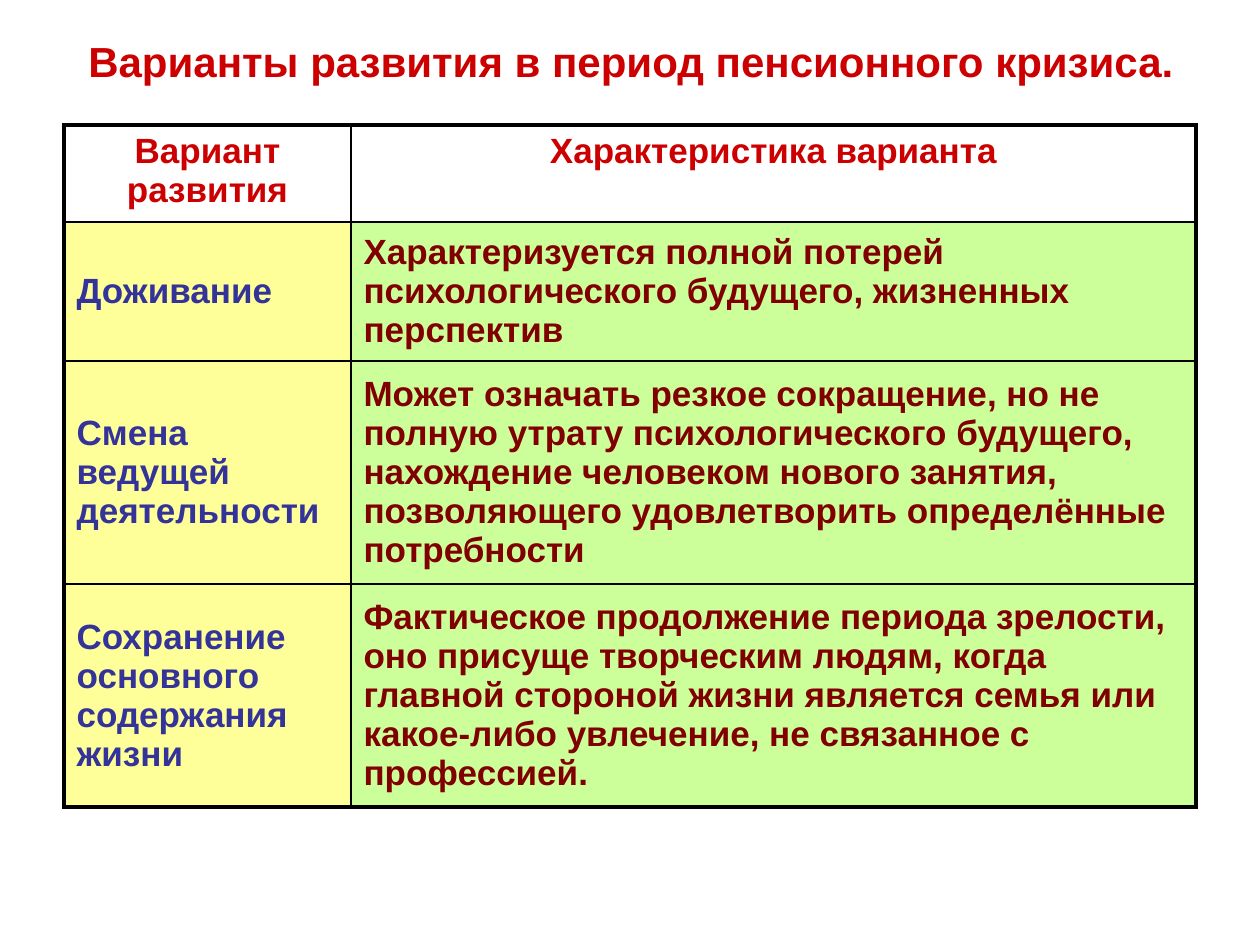
from pptx import Presentation
from pptx.dml.color import RGBColor
from pptx.enum.text import MSO_ANCHOR as Anchor, MSO_AUTO_SIZE as AutoSize, PP_ALIGN as Align
from pptx.oxml import parse_xml
from pptx.oxml.ns import nsdecls
from pptx.util import Emu, Pt

# Content
TITLE = "Варианты развития в период пенсионного кризиса."
ROWS = [
    ("Вариант развития", "Характеристика варианта"),
    ("Доживание",
     "Характеризуется полной потерей психологического будущего, жизненных перспектив"),
    ("Смена ведущей деятельности",
     "Может означать резкое сокращение, но не полную утрату психологического будущего, "
     "нахождение человеком нового занятия, позволяющего удовлетворить определённые потребности"),
    ("Сохранение основного содержания жизни",
     "Фактическое продолжение периода зрелости, оно присуще творческим людям, когда главной "
     "стороной жизни является семья или какое-либо увлечение, не связанное с профессией."),
]
COLUMN_WIDTHS = [287, 845]
ROW_HEIGHTS = [97, 139, 223, 223]
RED = "CC0000"
HEADER_STYLE = (RED, "FFFFFF")
COLUMN_STYLES = [("333399", "FFFF99"), ("800000", "CCFF99")]  # text, fill
THIN, THICK = Pt(1), Pt(2.25)


def px(count):
    return Emu(round(count * 914400 / 126))


def color(value):
    return RGBColor.from_string(value)


def format_text(frame, size, text_color, align):
    for para in frame.paragraphs:
        para.alignment = align
        for span in para.runs:
            font = span.font
            font.name, font.size, font.bold = "Arial", Pt(size), True
            font.color.rgb = color(text_color)


def set_borders(cell, widths):
    """Draw black borders; widths maps L, R, T, B to line widths."""
    props = cell._tc.get_or_add_tcPr()
    for index, (side, width) in enumerate(widths.items()):
        props.insert(index, parse_xml(
            f'<a:ln{side} {nsdecls("a")} w="{width}"><a:solidFill>'
            f'<a:srgbClr val="000000"/></a:solidFill></a:ln{side}>'))


deck = Presentation()
deck.slide_width, deck.slide_height = px(1260), px(945)
page = deck.slides.add_slide(deck.slide_layouts[5])

# Title
title = page.shapes.title
title.left, title.top, title.width, title.height = px(64), px(0), px(1134), px(86)
frame = title.text_frame
frame.text = TITLE
frame.word_wrap = True
frame.auto_size = AutoSize.NONE
frame.vertical_anchor = Anchor.BOTTOM
frame.margin_top = frame.margin_bottom = 0
format_text(frame, 24, RED, Align.CENTER)

# Table
table = page.shapes.add_table(
    len(ROWS), len(COLUMN_WIDTHS), px(64), px(125),
    px(sum(COLUMN_WIDTHS)), px(sum(ROW_HEIGHTS))).table
for column, width in zip(table.columns, COLUMN_WIDTHS):
    column.width = px(width)
for row, height in zip(table.rows, ROW_HEIGHTS):
    row.height = px(height)

# Cells: thick outer frame, thin inner lines
last_row, last_col = len(ROWS) - 1, len(COLUMN_WIDTHS) - 1
for r, texts in enumerate(ROWS):
    for c, text in enumerate(texts):
        cell = table.cell(r, c)
        is_header = r == 0
        text_color, fill_color = HEADER_STYLE if is_header else COLUMN_STYLES[c]
        cell.text_frame.text = text
        cell.vertical_anchor = Anchor.TOP if is_header else Anchor.MIDDLE
        format_text(cell.text_frame, 20, text_color, Align.CENTER if is_header else Align.LEFT)
        cell.fill.solid()
        cell.fill.fore_color.rgb = color(fill_color)
        set_borders(cell, {
            "L": THICK if c == 0 else THIN,
            "R": THICK if c == last_col else THIN,
            "T": THICK if r == 0 else THIN,
            "B": THICK if r == last_row else THIN,
        })

deck.save("out.pptx")
